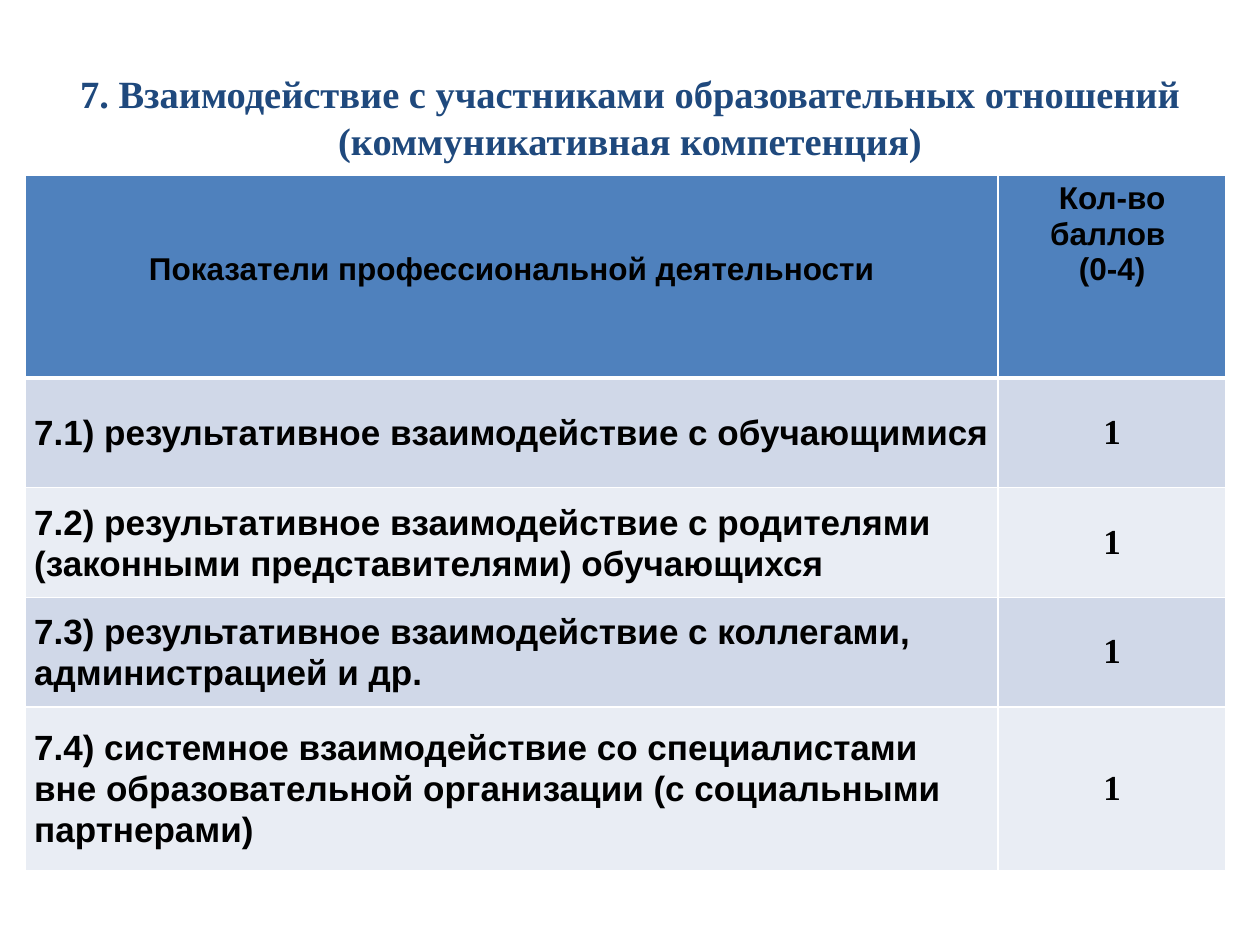
from dataclasses import dataclass

import lxml.etree
import pptx
import pptx.dml.color
import pptx.enum.text
import pptx.oxml.ns
import pptx.table
import pptx.text.text
import pptx.util

Cm = pptx.util.Cm
Pt = pptx.util.Pt
ALIGN = pptx.enum.text.PP_ALIGN
ANCHOR = pptx.enum.text.MSO_ANCHOR

COLORS = {
    "title": "1F497D",
    "text": "000000",
    "header": "4F81BD",
    "odd": "D0D8E8",
    "even": "E9EDF4",
    "border": "FFFFFF",
}
TITLE = "7. Взаимодействие с участниками образовательных отношений (коммуникативная компетенция)"
COLUMN_WIDTHS = (19.61, 4.6)
HEADER_HEIGHT = 4.09
HEADER_MARGIN = {"margin_top": Cm(1.55)}
BODY_FORMAT = {
    "vertical_anchor": ANCHOR.MIDDLE,
    "margin_left": Cm(0.18),
    "margin_right": Cm(0.18),
    "margin_top": 0,
    "margin_bottom": 0,
}


@dataclass
class TextStyle:
    font: str
    size: int
    color: str = "text"
    alignment: ALIGN = ALIGN.CENTER
    line_spacing: float = 1.0


@dataclass
class Indicator:
    text: str
    score: int
    height: float = 2.21


TITLE_STYLE = TextStyle("Times New Roman", 22, "title")
HEADER_STYLE = TextStyle("Arial", 18)
INDICATOR_STYLE = TextStyle("Arial", 20, alignment=ALIGN.LEFT, line_spacing=1.05)
SCORE_STYLE = TextStyle("Times New Roman", 20)

INDICATORS = [
    Indicator("7.1) результативное взаимодействие с обучающимися", 1),
    Indicator("7.2) результативное взаимодействие с родителями (законными представителями) обучающихся", 1),
    Indicator("7.3) результативное взаимодействие с коллегами, администрацией и др.", 1),
    Indicator(
        "7.4) системное взаимодействие со специалистами вне образовательной организации (с социальными партнерами)",
        1,
        3.3,
    ),
]


def apply_format(target: object, values: dict) -> None:
    for name, value in values.items():
        setattr(target, name, value)


def rgb(name: str) -> pptx.dml.color.RGBColor:
    return pptx.dml.color.RGBColor.from_string(COLORS[name])


def write_text(frame: pptx.text.text.TextFrame, text: str, style: TextStyle) -> None:
    frame.text = text
    for paragraph in frame.paragraphs:
        apply_format(paragraph, {"alignment": style.alignment, "line_spacing": style.line_spacing})
        for run in paragraph.runs:
            apply_format(run.font, {"name": style.font, "size": Pt(style.size), "bold": True})
            run.font.color.rgb = rgb(style.color)


def add_borders(cell: pptx.table._Cell, bottom: int) -> None:
    properties = cell._tc.get_or_add_tcPr()
    widths = {"a:lnL": 1, "a:lnR": 1, "a:lnT": 1, "a:lnB": bottom}
    for index, (tag, width) in enumerate(widths.items()):
        line = lxml.etree.Element(pptx.oxml.ns.qn(tag), w=str(Pt(width)))
        fill = lxml.etree.SubElement(line, pptx.oxml.ns.qn("a:solidFill"))
        lxml.etree.SubElement(fill, pptx.oxml.ns.qn("a:srgbClr"), val=COLORS["border"])
        properties.insert(index, line)


def fill_cell(
    cell: pptx.table._Cell, text: str, style: TextStyle, fill: str, values: dict, bottom: int = 1
) -> None:
    write_text(cell.text_frame, text, style)
    apply_format(cell, values)
    cell.fill.solid()
    cell.fill.fore_color.rgb = rgb(fill)
    add_borders(cell, bottom)


def main() -> None:
    presentation = pptx.Presentation()
    apply_format(presentation, {"slide_width": Cm(25.4), "slide_height": Cm(19.05)})
    slide = presentation.slides.add_slide(presentation.slide_layouts[6])

    heights = [HEADER_HEIGHT] + [indicator.height for indicator in INDICATORS]
    table = slide.shapes.add_table(
        len(heights), len(COLUMN_WIDTHS), Cm(0.51), Cm(3.53), Cm(sum(COLUMN_WIDTHS)), Cm(sum(heights))
    ).table
    for column, width in zip(table.columns, COLUMN_WIDTHS):
        column.width = Cm(width)
    for row, height in zip(table.rows, heights):
        row.height = Cm(height)

    fill_cell(
        table.cell(0, 0), "Показатели профессиональной деятельности", HEADER_STYLE, "header", HEADER_MARGIN, 3
    )
    fill_cell(table.cell(0, 1), "Кол-во баллов \n(0-4)", HEADER_STYLE, "header", {}, 3)
    for number, indicator in enumerate(INDICATORS, start=1):
        fill = "odd" if number % 2 else "even"
        fill_cell(table.cell(number, 0), indicator.text, INDICATOR_STYLE, fill, BODY_FORMAT)
        fill_cell(table.cell(number, 1), str(indicator.score), SCORE_STYLE, fill, BODY_FORMAT)

    title = slide.shapes.add_textbox(Cm(1.27), Cm(0.76), Cm(22.86), Cm(3.18))
    apply_format(title.text_frame, {"word_wrap": True, "vertical_anchor": ANCHOR.MIDDLE})
    write_text(title.text_frame, TITLE, TITLE_STYLE)

    presentation.save("out.pptx")


if __name__ == "__main__":
    main()
